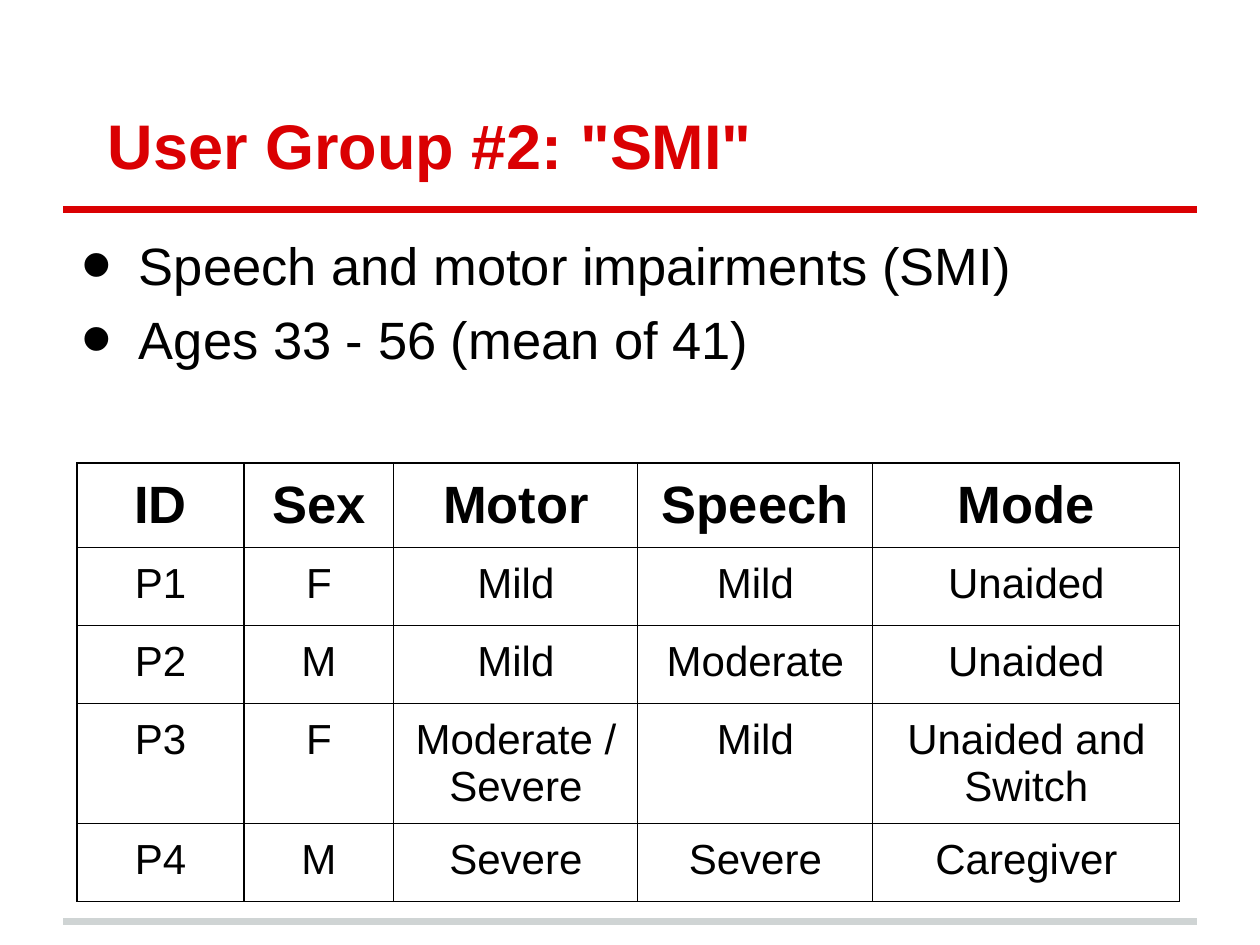
"""Build the user group slide: title, two bullets and a participant table."""
from lxml import etree
from pptx import Presentation
from pptx import util as u
from pptx.dml import color
from pptx.enum import shapes, text
from pptx.oxml import ns

SCALE = 914400 / 126


def px(n):
    return u.Emu(round(n * SCALE))


def rgb(h):
    return color.RGBColor.from_string(h)


RED, GREY, BLACK = "DA0002", "CFD4D4", "000000"
MARGINS = {"margin_left": px(13), "margin_right": px(13),
           "margin_top": px(13), "margin_bottom": px(13)}
TITLE = {"name": "Arial", "size": u.Pt(36), "bold": True}
BODY = {"name": "Arial", "size": u.Pt(30), "bold": False}
HEAD = {"name": "Arial", "size": u.Pt(30), "bold": True}
CELL = {"name": "Arial", "size": u.Pt(24), "bold": False}
BULLETS = ["Speech and motor impairments (SMI)", "Ages 33 - 56 (mean of 41)"]
ROWS = [
    ["ID", "Sex", "Motor", "Speech", "Mode"],
    ["P1", "F", "Mild", "Mild", "Unaided"],
    ["P2", "M", "Mild", "Moderate", "Unaided"],
    ["P3", "F", "Moderate / Severe", "Mild", "Unaided and Switch"],
    ["P4", "M", "Severe", "Severe", "Caregiver"],
]
COL_W = [167, 150, 244, 235, 307]
ROW_H = [83, 78, 78, 119, 78]

prs = Presentation()
prs.slide_width, prs.slide_height = px(1260), px(945)
s = prs.slides.add_slide(prs.slide_layouts[1])

for y, c in [(922, GREY), (210, RED)]:
    ln = s.shapes.add_connector(shapes.MSO_CONNECTOR.STRAIGHT, px(63), px(y), px(1197), px(y))
    ln.line.color.rgb = rgb(c)
    ln.line.width = u.Pt(4)
    etree.SubElement(ln._element.spPr, ns.qn("a:effectLst"))

title, body = s.placeholders
for sp, top, height, anchor, lines, fmt, c, left, indent in [
    (title, 38, 157, text.MSO_ANCHOR.BOTTOM, ['User Group #2: "SMI"'], TITLE, RED, 0, 32),
    (body, 220, 684, text.MSO_ANCHOR.TOP, BULLETS, BODY, BLACK, 63, -58),
]:
    sp.left, sp.top, sp.width, sp.height = px(63), px(top), px(1134), px(height)
    tf = sp.text_frame
    tf.text = "\n".join(lines)
    tf.word_wrap = True
    tf.auto_size = text.MSO_AUTO_SIZE.NONE
    tf.vertical_anchor = anchor
    for k, v in MARGINS.items():
        setattr(tf, k, v)
    for p in tf.paragraphs:
        p.alignment = text.PP_ALIGN.LEFT
        p.space_before = u.Pt(6 if sp is body else 0)
        pPr = p._p.get_or_add_pPr()
        pPr.set("marL", str(px(left)))
        pPr.set("indent", str(px(indent)))
        r = p.runs[0]
        r.font.color.rgb = rgb(c)
        for k, v in fmt.items():
            setattr(r.font, k, v)

for p in body.text_frame.paragraphs:
    pPr = p._p.get_or_add_pPr()
    clr = etree.SubElement(pPr, ns.qn("a:buClr"))
    etree.SubElement(clr, ns.qn("a:srgbClr"), val=BLACK)
    etree.SubElement(pPr, ns.qn("a:buSzPct"), val="167000")
    etree.SubElement(pPr, ns.qn("a:buFont"), typeface="Arial")
    etree.SubElement(pPr, ns.qn("a:buChar"), char="•")

tbl = s.shapes.add_table(len(ROWS), len(COL_W), px(77), px(463),
                         px(sum(COL_W)), px(sum(ROW_H))).table
tbl.first_row = tbl.horz_banding = False
for col, w in zip(tbl.columns, COL_W):
    col.width = px(w)
for row, h, words in zip(tbl.rows, ROW_H, ROWS):
    row.height = px(h)
    for cell, word in zip(row.cells, words):
        cell.text = word
        cell.fill.background()
        for k, v in MARGINS.items():
            setattr(cell, k, v)
        p = cell.text_frame.paragraphs[0]
        p.alignment = text.PP_ALIGN.CENTER
        r = p.runs[0]
        r.font.color.rgb = rgb(BLACK)
        for k, v in (HEAD if words is ROWS[0] else CELL).items():
            setattr(r.font, k, v)
        tcPr = cell._tc.get_or_add_tcPr()
        for i, side in enumerate(["lnL", "lnR", "lnT", "lnB"]):
            ln = etree.Element(ns.qn("a:" + side), w=str(u.Pt(0.75)))
            fill = etree.SubElement(ln, ns.qn("a:solidFill"))
            etree.SubElement(fill, ns.qn("a:srgbClr"), val=BLACK)
            tcPr.insert(i, ln)

prs.save("out.pptx")
